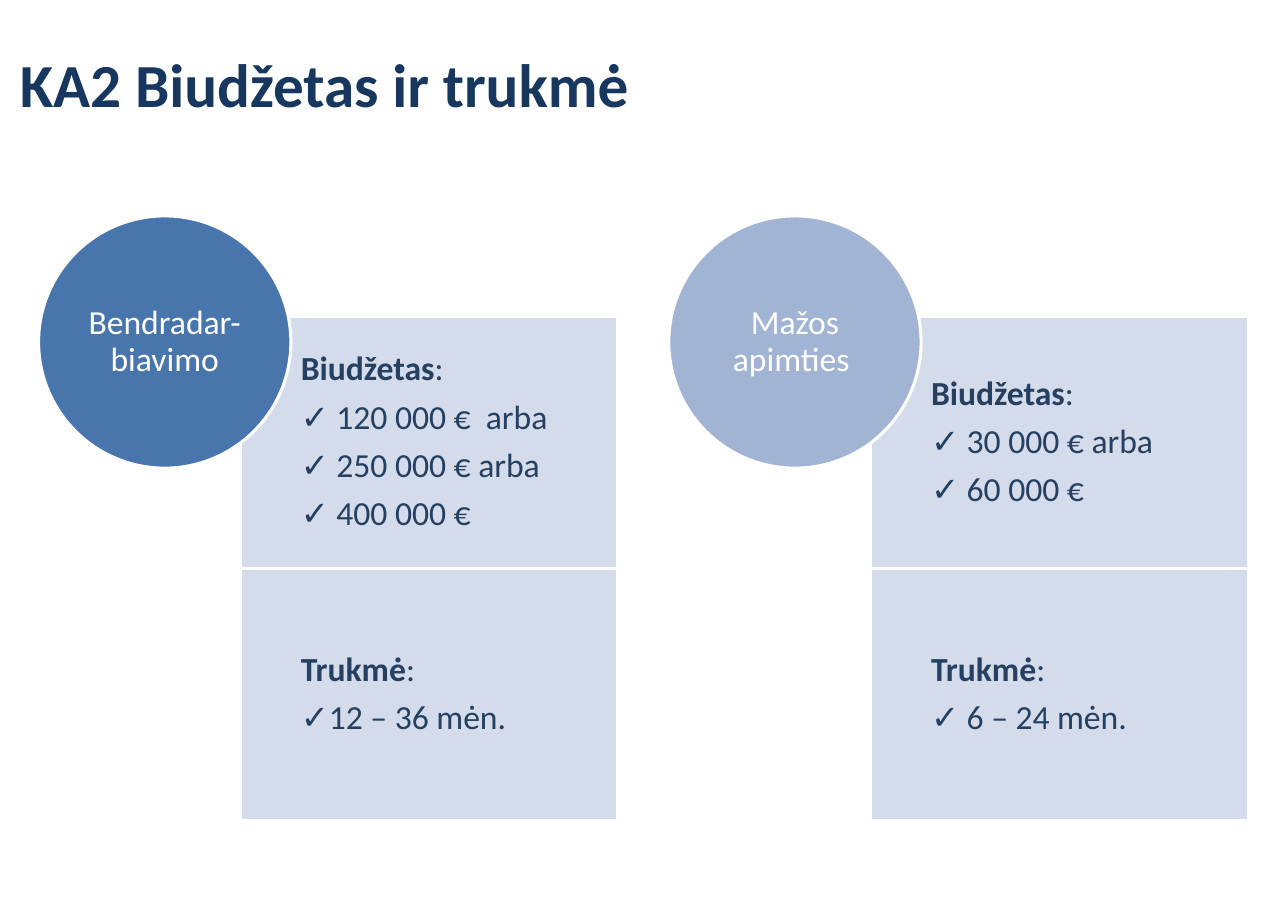
from pptx import Presentation
from pptx.dml.color import RGBColor
from pptx.enum.shapes import MSO_SHAPE as Preset
from pptx.enum.text import MSO_ANCHOR as Anchor, PP_ALIGN as Align
from pptx.oxml.ns import qn
from pptx.util import Inches, Pt

COLORS = {
    "title": "17375E",
    "body": "254061",
    "panel": "D0D8E8",
    "white": "FFFFFF",
    "cooperation": "4875AC",
    "small_scale": "A2B4D4",
}
CIRCLE_SIZE = 2.29
PANEL_WIDTH = 3.43
PANEL_HEIGHT = 2.29
FIRST_LEFT = 0.35
COLUMN_STEP = 5.72
CIRCLE_TOP = 1.96
PANEL_OFFSET = 1.83
PANEL_TOP = 2.87
TEXT_INDENT = 0.55

PROJECTS = [
    ("Bendradar-biavimo", "cooperation", [
        ("Biudžetas", ["✓ 120 000 €  arba", "✓ 250 000 € arba", "✓ 400 000 €"]),
        ("Trukmė", ["✓12 – 36 mėn."]),
    ]),
    ("Mažos apimties ", "small_scale", [
        ("Biudžetas", ["✓ 30 000 € arba", "✓ 60 000 €"]),
        ("Trukmė", ["✓ 6 – 24 mėn."]),
    ]),
]


class SlideBuilder:
    font_name = "Calibri"
    body_size = 22

    def __init__(self, slide):
        self.slide = slide

    def color(self, name):
        return RGBColor.from_string(COLORS[name])

    def style_run(self, run, size, color, bold=False):
        run.font.name = self.font_name
        run.font.size = Pt(size)
        run.font.bold = bold
        run.font.color.rgb = self.color(color)

    def prepare_frame(self, frame, insets):
        frame.word_wrap = True
        frame.vertical_anchor = Anchor.MIDDLE
        (frame.margin_left, frame.margin_top,
         frame.margin_right, frame.margin_bottom) = map(Inches, insets)

    def style_paragraph(self, paragraph, color, alignment):
        paragraph.alignment = alignment
        paragraph.line_spacing = 0.9
        paragraph.space_after = Pt(7.7)
        for run in paragraph.runs:
            self.style_run(run, self.body_size, color)

    def text_box(self, left, top, width, height, text, insets):
        box = self.slide.shapes.add_textbox(*map(Inches, (left, top, width, height)))
        frame = box.text_frame
        self.prepare_frame(frame, insets)
        frame.text = text
        return frame

    def title(self, text):
        frame = self.text_box(0.07, 0.06, 9.93, 1.38, text, (0.11, 0.06, 0.11, 0.06))
        self.style_run(frame.paragraphs[0].runs[0], 40, "title", True)

    def shape(self, preset, left, top, width, height, fill):
        shape = self.slide.shapes.add_shape(preset, *map(Inches, (left, top, width, height)))
        shape.shadow.inherit = False
        shape.fill.solid()
        shape.fill.fore_color.rgb = self.color(fill)
        shape.line.color.rgb = self.color("white")
        shape.line.width = Pt(2)
        return shape

    def panel(self, left, top, heading, items):
        shape = self.shape(Preset.RECTANGLE, left, top, PANEL_WIDTH, PANEL_HEIGHT, "panel")
        fill_color = shape.fill._xPr.find(qn("a:solidFill"))[0]
        fill_color.append(fill_color.makeelement(qn("a:alpha"), {"val": "90000"}))
        frame = self.text_box(left + TEXT_INDENT, top, PANEL_WIDTH - TEXT_INDENT, PANEL_HEIGHT,
                              "\n".join([heading, *items]), (0, 0.17, 0.17, 0.17))
        frame.paragraphs[0].add_run().text = ":"
        for paragraph in frame.paragraphs:
            self.style_paragraph(paragraph, "body", Align.LEFT)
        frame.paragraphs[0].runs[0].font.bold = True

    def circle(self, left, top, text, fill):
        shape = self.shape(Preset.OVAL, left, top, CIRCLE_SIZE, CIRCLE_SIZE, fill)
        frame = shape.text_frame
        self.prepare_frame(frame, (0, 0, 0, 0))
        frame.text = text
        self.style_paragraph(frame.paragraphs[0], "white", Align.CENTER)


def main():
    presentation = Presentation()
    presentation.slide_width = Inches(11.69)
    presentation.slide_height = Inches(8.27)
    slide = presentation.slides.add_slide(presentation.slide_layouts[6])
    builder = SlideBuilder(slide)
    builder.title("KA2 Biudžetas ir trukmė")
    for column, (name, fill, panels) in enumerate(PROJECTS):
        left = FIRST_LEFT + column * COLUMN_STEP
        for row, (heading, items) in enumerate(panels):
            builder.panel(left + PANEL_OFFSET, PANEL_TOP + row * PANEL_HEIGHT, heading, items)
        builder.circle(left, CIRCLE_TOP, name, fill)
    presentation.save("out.pptx")


if __name__ == "__main__":
    main()
